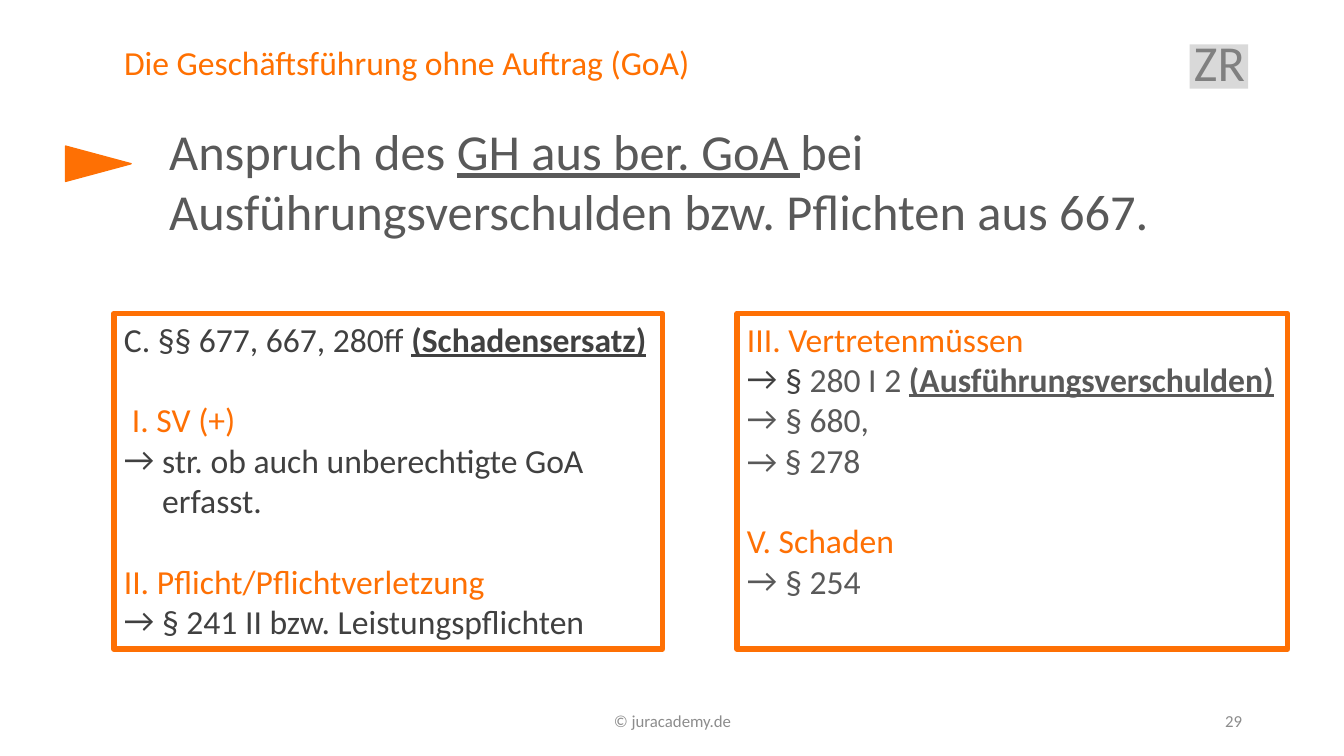
from pptx import Presentation
from pptx.dml.color import RGBColor
from pptx.enum.shapes import MSO_SHAPE
from pptx.enum.text import MSO_ANCHOR, MSO_AUTO_SIZE, PP_ALIGN
from pptx.oxml.ns import qn
from pptx.util import Inches, Pt
from lxml.etree import SubElement

THEME = {
    "font": "Calibri",
    "title": "FF7001", "accent": "FE7004", "dark": "404040", "text": "595959",
    "badge": "808080", "badge_fill": "D9D9D9", "footer": "8C8C8C",
    "big": 36, "normal": 24, "small": 12, "gap": 29, "border": 4,
}

prs = Presentation()
prs.slide_width, prs.slide_height = Inches(13.33), Inches(7.5)
s = prs.slides.add_slide(prs.slide_layouts[1])


def share(x, y, w, h):
    return [int(v * side / 100) for v, side in
            ((x, prs.slide_width), (y, prs.slide_height), (w, prs.slide_width), (h, prs.slide_height))]


def write(sp, paragraphs, size, anchor=MSO_ANCHOR.TOP, **formats):
    tf = sp.text_frame
    for name, value in {"word_wrap": True, "auto_size": MSO_AUTO_SIZE.NONE, "vertical_anchor": anchor}.items():
        setattr(tf, name, value)
    for i, (kind, runs) in enumerate(paragraphs):
        p = tf.add_paragraph() if i else tf.paragraphs[0]
        pPr = p._p.get_or_add_pPr()
        indent = Inches(0.38) if kind == "arrow" else 0
        pPr.set("marL", str(Inches(0.08) if kind == "inset" else indent))
        pPr.set("indent", str(-indent))
        if kind == "arrow":
            SubElement(pPr, qn("a:buFont"), typeface=THEME["font"])
            SubElement(pPr, qn("a:buChar"), char="→")
        else:
            SubElement(pPr, qn("a:buNone"))
        before = THEME["gap"] if i and kind in ("inset", "head") else 0
        for name, value in {"alignment": PP_ALIGN.LEFT, "space_before": Pt(before), **formats}.items():
            setattr(p, name, value)
        for text, colour, *marks in runs:
            r = p.add_run()
            r.text = text
            for name, value in {"name": THEME["font"], "size": Pt(THEME[size]),
                                "bold": "b" in marks, "underline": "u" in marks}.items():
                setattr(r.font, name, value)
            r.font.color.rgb = RGBColor.from_string(THEME[colour])


badge, pointer, left, right = [
    s.shapes.add_shape(kind, *share(*area)) for kind, area in (
        (MSO_SHAPE.RECTANGLE, (88.52, 5.87, 4.35, 5.87)),
        (MSO_SHAPE.ISOSCELES_TRIANGLE, (6, 17.33, 2.63, 8.67)),
        (MSO_SHAPE.RECTANGLE, (8.48, 41.47, 40.81, 44.4)),
        (MSO_SHAPE.RECTANGLE, (54.84, 41.47, 40.96, 44.4)))]
for sp, fill, width in ((badge, "badge_fill", 0), (pointer, "accent", 1),
                        (left, None, THEME["border"]), (right, None, THEME["border"])):
    sp.shadow.inherit = False
    if fill:
        sp.fill.solid()
        sp.fill.fore_color.rgb = RGBColor.from_string(THEME[fill])
    else:
        sp.fill.background()
    if width:
        sp.line.color.rgb = RGBColor.from_string(THEME["accent"])
        sp.line.width = Pt(width)
    else:
        sp.line.fill.background()
pointer.rotation = 90
s.shapes._spTree.insert(2, badge._element)

title, label = s.shapes.title, s.placeholders[1]
for sp, area in ((title, (8.48, 5.47, 74.94, 6.27)), (label, (87.47, 4.4, 6.53, 10))):
    sp.left, sp.top, sp.width, sp.height = share(*area)
write(title, [("plain", [("Die Geschäftsführung ohne Auftrag (GoA)", "title")])],
      "normal", MSO_ANCHOR.MIDDLE, line_spacing=0.9)
write(label, [("plain", [("ZR", "badge")])], "big", alignment=PP_ALIGN.CENTER, line_spacing=0.9)

claim = s.shapes.add_textbox(*share(11.85, 15.2, 81.25, 17.47))
write(claim, [("plain", [
    ("Anspruch des ", "text"),
    ("GH aus ber. GoA ", "text", "u"),
    ("bei Ausführungsverschulden bzw. Pflichten aus 667.", "text")])], "big")

write(left, [
    ("plain", [("C. §§ 677, 667, 280ff ", "dark"), ("(Schadensersatz)", "dark", "b", "u")]),
    ("inset", [("I. SV (+)", "accent")]),
    ("arrow", [("str. ob auch unberechtigte GoA erfasst.", "dark")]),
    ("head", [("II. Pflicht/Pflichtverletzung", "accent")]),
    ("arrow", [("§ 241 II bzw. Leistungspflichten", "dark")]),
], "normal")
write(right, [
    ("head", [("III. Vertretenmüssen", "accent")]),
    ("arrow", [("§ ", "dark"), ("280 I 2 ", "text"), ("(Ausführungsverschulden)", "text", "b", "u")]),
    ("arrow", [("§ 680,", "text")]),
    ("plain", [("→ § 278", "text")]),
    ("head", [("V. Schaden", "accent")]),
    ("arrow", [("§ 254", "text")]),
], "normal")

for text, x, w, align in (("© juracademy.de", 33.16, 33.76, PP_ALIGN.CENTER),
                          ("29", 70.67, 22.5, PP_ALIGN.RIGHT)):
    footer = s.shapes.add_textbox(*share(x, 92.67, w, 5.33))
    write(footer, [("plain", [(text, "footer")])], "small", MSO_ANCHOR.MIDDLE, alignment=align)

prs.save("out.pptx")
